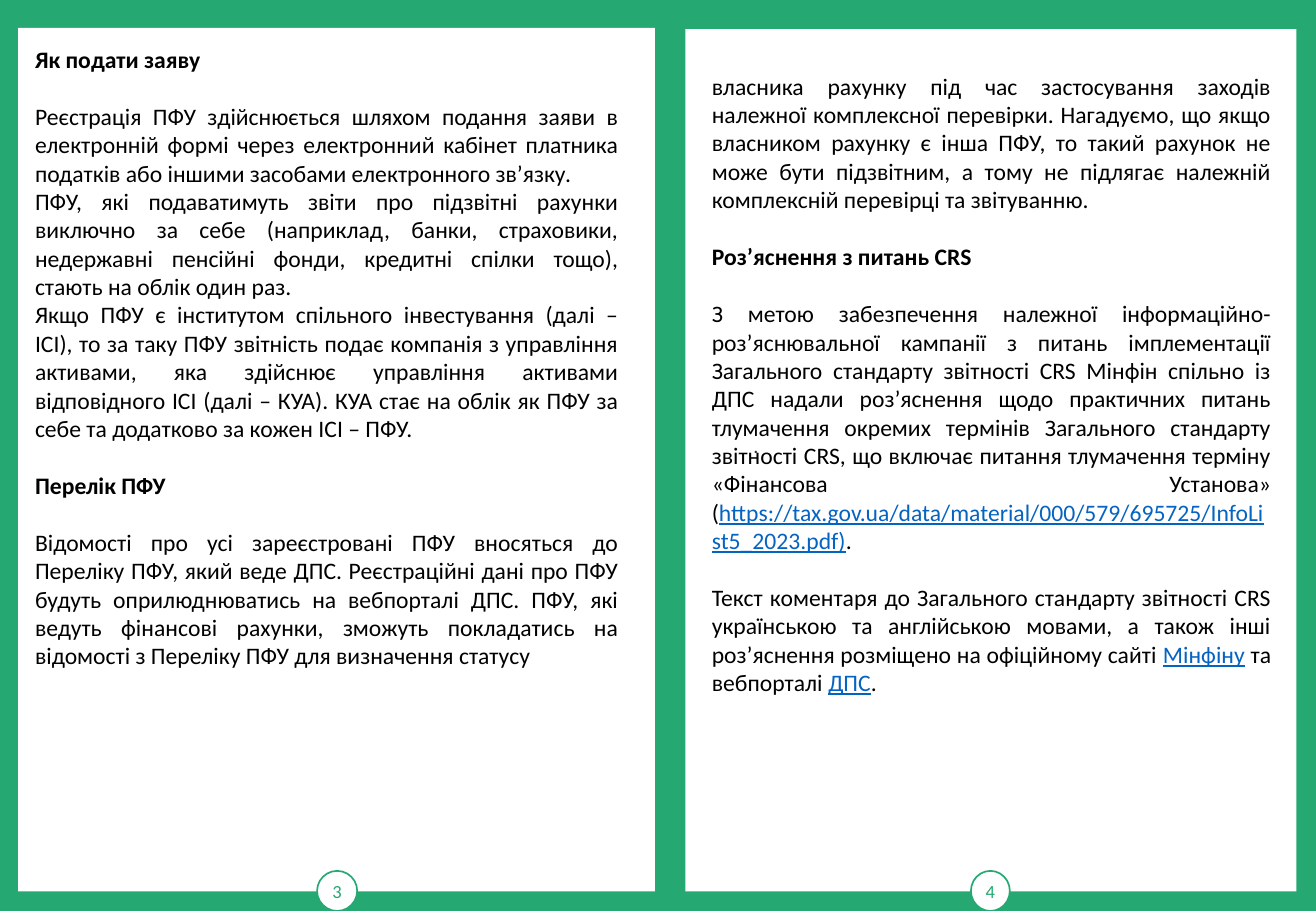
from dataclasses import dataclass

import pptx
import pptx.util
from pptx.dml.color import RGBColor
from pptx.enum.shapes import MSO_SHAPE
from pptx.enum.text import MSO_ANCHOR, PP_ALIGN
from pptx.util import Inches

GREEN = RGBColor(0x25, 0xA8, 0x72)
WHITE = RGBColor(0xFF, 0xFF, 0xFF)
BLACK = RGBColor(0x00, 0x00, 0x00)
GREY = RGBColor(0x33, 0x33, 0x33)
BLUE = RGBColor(0x05, 0x63, 0xC1)
FONT = "Calibri"
GAP = 17


@dataclass
class Run:
    text: str
    bold: bool = False
    link: bool = False


@dataclass
class Para:
    runs: list[Run]
    gap: bool = False


@dataclass
class Box:
    left: float
    top: float
    width: float
    height: float


@dataclass
class Page:
    sheet: Box
    badge: Box
    number: str
    body: Box
    paras: list[Para]


def head(text: str, gap: bool = False) -> Para:
    return Para([Run(text, bold=True)], gap)


def plain(text: str, gap: bool = False) -> Para:
    return Para([Run(text)], gap)


LEFT = [
    head("Як подати заяву"),
    plain("Реєстрація ПФУ здійснюється шляхом подання заяви в електронній формі "
          "через електронний кабінет платника податків або іншими засобами "
          "електронного зв’язку.", True),
    plain("ПФУ, які подаватимуть звіти про підзвітні рахунки виключно за себе "
          "(наприклад, банки, страховики, недержавні пенсійні фонди, кредитні "
          "спілки тощо), стають на облік один раз."),
    plain("Якщо ПФУ є інститутом спільного інвестування (далі – ІСІ), то за таку "
          "ПФУ звітність подає компанія з управління активами, яка здійснює "
          "управління активами відповідного ІСІ (далі – КУА). КУА стає на облік "
          "як ПФУ за себе та додатково за кожен ІСІ – ПФУ."),
    head("Перелік ПФУ", True),
    plain("Відомості про усі зареєстровані ПФУ вносяться до Переліку ПФУ, який "
          "веде ДПС. Реєстраційні дані про ПФУ будуть оприлюднюватись на "
          "вебпорталі ДПС. ПФУ, які ведуть фінансові рахунки, зможуть "
          "покладатись на відомості з Переліку ПФУ для визначення статусу", True),
]

RIGHT = [
    plain("власника рахунку під час застосування заходів належної комплексної "
          "перевірки. Нагадуємо, що якщо власником рахунку є інша ПФУ, то такий "
          "рахунок не може бути підзвітним, а тому не підлягає належній "
          "комплексній перевірці та звітуванню."),
    head("Роз’яснення з питань CRS", True),
    Para([
        Run("З метою забезпечення належної інформаційно-роз’яснювальної кампанії "
            "з питань імплементації Загального стандарту звітності CRS Мінфін "
            "спільно із ДПС надали роз’яснення щодо практичних питань тлумачення "
            "окремих термінів Загального стандарту звітності CRS, що включає "
            "питання тлумачення терміну «Фінансова Установа» ("),
        Run("https://tax.gov.ua/data/material/000/579/695725/InfoList5_2023.pdf)",
            link=True),
        Run("."),
    ], True),
    Para([
        Run("Текст коментаря до Загального стандарту звітності CRS українською "
            "та англійською мовами, а також інші роз’яснення розміщено на "
            "офіційному сайті "),
        Run("Мінфіну", link=True),
        Run(" та вебпорталі "),
        Run("ДПС", link=True),
        Run("."),
    ], True),
]

PAGES = [
    Page(Box(0.15, 0.23, 5.24, 7.11), Box(2.61, 7.17, 0.33, 0.33), "3",
         Box(0.19, 0.32, 5, 6.93), LEFT),
    Page(Box(5.64, 0.24, 5.03, 7.1), Box(7.99, 7.17, 0.32, 0.33), "4",
         Box(5.76, 0.54, 4.8, 6.6), RIGHT),
]


def place(box: Box) -> tuple:
    return tuple(Inches(v) for v in (box.left, box.top, box.width, box.height))


def add_run(para, text: str, size: float, color: RGBColor):
    run = para.add_run()
    run.text = text
    run.font.name = FONT
    run.font.size = pptx.util.Pt(size)
    run.font.color.rgb = color
    return run


def add_white(slide, kind: MSO_SHAPE, box: Box):
    shape = slide.shapes.add_shape(kind, *place(box))
    shape.shadow.inherit = False
    shape.fill.solid()
    shape.fill.fore_color.rgb = WHITE
    shape.line.fill.background()
    return shape


def add_badge(slide, box: Box, number: str) -> None:
    badge = add_white(slide, MSO_SHAPE.OVAL, box)
    badge.line.color.rgb = GREEN
    badge.line.width = pptx.util.Pt(1)
    frame = badge.text_frame
    frame.margin_left = frame.margin_right = 0
    frame.margin_top = frame.margin_bottom = 0
    frame.vertical_anchor = MSO_ANCHOR.MIDDLE
    para = frame.paragraphs[0]
    para.alignment = PP_ALIGN.CENTER
    add_run(para, number, 11, GREEN)


def add_frame(slide, box: Box):
    frame = slide.shapes.add_textbox(*place(box)).text_frame
    frame.word_wrap = True
    return frame


def add_dot(slide) -> None:
    frame = add_frame(slide, Box(5.61, 0.23, 5.02, 6.84))
    frame.vertical_anchor = MSO_ANCHOR.MIDDLE
    frame.margin_left = Inches(0.59)
    para = frame.paragraphs[0]
    para.alignment = PP_ALIGN.JUSTIFY
    para.line_spacing = 1.15
    add_run(para, ".", 12, GREY)


def add_body(slide, box: Box, paras: list[Para]) -> None:
    frame = add_frame(slide, box)
    for i, item in enumerate(paras):
        para = frame.add_paragraph() if i else frame.paragraphs[0]
        para.alignment = PP_ALIGN.JUSTIFY
        if item.gap:
            para.space_before = pptx.util.Pt(GAP)
        for part in item.runs:
            run = add_run(para, part.text, 14, BLUE if part.link else BLACK)
            run.font.bold = part.bold
            run.font.underline = part.link


def main() -> None:
    deck = pptx.Presentation()
    deck.slide_width = Inches(10.83)
    deck.slide_height = Inches(7.5)
    slide = deck.slides.add_slide(deck.slide_layouts[6])
    slide.background.fill.solid()
    slide.background.fill.fore_color.rgb = GREEN
    for page in PAGES:
        add_white(slide, MSO_SHAPE.RECTANGLE, page.sheet)
        add_badge(slide, page.badge, page.number)
    add_dot(slide)
    for page in PAGES:
        add_body(slide, page.body, page.paras)
    deck.save("out.pptx")


if __name__ == "__main__":
    main()
